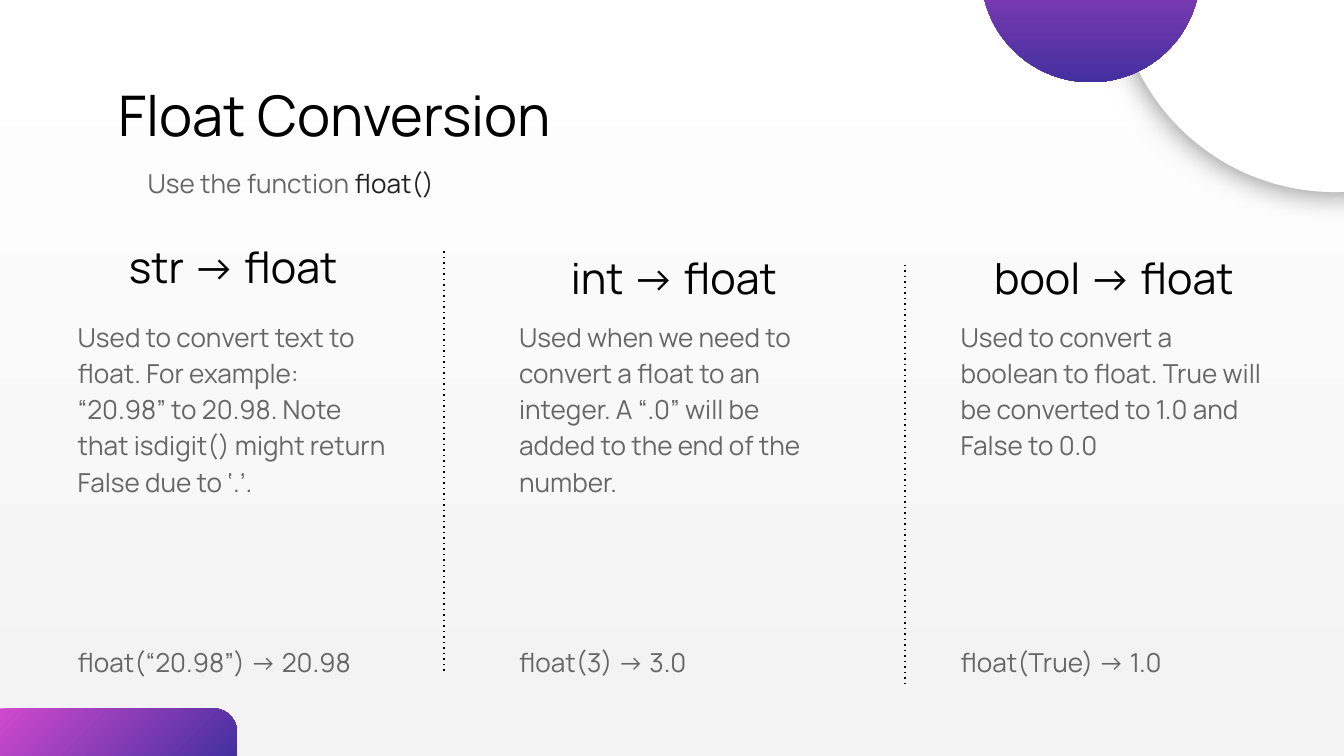
from typing import NamedTuple

from lxml.etree import SubElement
from pptx import Presentation
from pptx.dml.color import RGBColor
from pptx.enum.shapes import MSO_CONNECTOR as Connector, MSO_SHAPE as Preset
from pptx.enum.text import MSO_ANCHOR as Anchor, PP_ALIGN as Align
from pptx.oxml.ns import qn
from pptx.util import Pt

FONT = "Manrope"
BLACK, GREY, DARK, WHITE = "000000", "666666", "212121", "FFFFFF"
PINK, INDIGO, PALE = "D149CE", "43309F", "F3F3F3"
BODY_SIZE = 14
BODY_SPACING = 1.15
BODY_LINE = 19.3


class Box(NamedTuple):
    left: float
    top: float
    width: float
    height: float


class Conversion(NamedTuple):
    heading: str
    heading_box: Box
    explanation: str
    example: str
    gap_lines: int


class Divider(NamedTuple):
    x: float
    top: float
    bottom: float


CONVERSIONS = [
    Conversion(
        "str -> float", Box(52.6, 128.9, 144.7, 28.1),
        "Used to convert text to float. For example: “20.98” to 20.98. "
        "Note that isdigit() might return False due to ‘.’.",
        "float(“20.98”) -> 20.98", 4),
    Conversion(
        "int -> float", Box(288.7, 134.6, 144.7, 28.1),
        "Used when we need to convert a float to an integer. "
        "A “.0” will be added to the end of the number.",
        "float(3) -> 3.0", 4),
    Conversion(
        "bool -> float", Box(517.7, 134.6, 158.4, 28.1),
        "Used to convert a boolean to float. "
        "True will be converted to 1.0 and False to 0.0",
        "float(True) -> 1.0", 5),
]
DIVIDERS = [Divider(237.8, 134.6, 360), Divider(484.8, 141.8, 368)]
COLUMN_LEFT, COLUMN_STEP = 34.5, 236.5


def rgb(hex_colour: str) -> RGBColor:
    return RGBColor.from_string(hex_colour)


def points(box: Box) -> list:
    return [Pt(length) for length in box]


def paint_gradient(fill, start: str, end: str, angle: float) -> None:
    fill.gradient()
    fill.gradient_angle = angle
    for stop, colour in zip(fill.gradient_stops, (start, end)):
        stop.color.rgb = rgb(colour)


def add_ornament(slide, preset, box: Box):
    ornament = slide.shapes.add_shape(preset, *points(box))
    ornament.shadow.inherit = False
    ornament.line.fill.background()
    return ornament


def add_glow(ornament, colour: str, blur: float, alpha: int) -> None:
    effects = ornament._element.spPr.find(qn("a:effectLst"))
    glow = SubElement(effects, qn("a:outerShdw"), blurRad=str(Pt(blur)),
                      dist="0", dir="0", algn="ctr", rotWithShape="0")
    tint = SubElement(glow, qn("a:srgbClr"), val=colour)
    SubElement(tint, qn("a:alpha"), val=str(alpha * 1000))


def add_divider(slide, divider: Divider) -> None:
    rule = slide.shapes.add_connector(
        Connector.STRAIGHT, Pt(divider.x), Pt(divider.top),
        Pt(divider.x), Pt(divider.bottom))
    rule.line.color.rgb = rgb(BLACK)
    rule.line.width = Pt(0.75)
    SubElement(rule.get_or_add_ln(), qn("a:prstDash"), val="dot")
    SubElement(rule._element.spPr, qn("a:effectLst"))


def add_text(slide, box: Box, paragraphs: list, *, size: float = BODY_SIZE,
             align=Align.LEFT, anchor=Anchor.TOP, spacing: float = 1.0,
             gap: float = 0) -> None:
    frame = slide.shapes.add_textbox(*points(box)).text_frame
    frame.word_wrap = True
    frame.vertical_anchor = anchor
    frame.margin_left = frame.margin_right = Pt(7.2)
    frame.margin_top = frame.margin_bottom = Pt(7.2)
    for index, runs in enumerate(paragraphs):
        paragraph = frame.add_paragraph() if index else frame.paragraphs[0]
        paragraph.alignment = align
        paragraph.line_spacing = spacing
        paragraph.space_before = Pt(gap if index else 0)
        for words, colour in runs:
            run = paragraph.add_run()
            run.text = words
            run.font.name = FONT
            run.font.size = Pt(size)
            run.font.color.rgb = rgb(colour)


def add_conversion(slide, conversion: Conversion, left: float) -> None:
    add_text(slide, conversion.heading_box, [[(conversion.heading, BLACK)]],
             size=23, align=Align.CENTER, anchor=Anchor.MIDDLE)
    add_text(slide, Box(left, 162.7, 180.7, 197.3),
             [[(conversion.explanation, GREY)], [(conversion.example, GREY)]],
             spacing=BODY_SPACING, gap=conversion.gap_lines * BODY_LINE)


def main() -> None:
    deck = Presentation()
    deck.slide_width, deck.slide_height = Pt(720), Pt(405)
    slide = deck.slides.add_slide(deck.slide_layouts[6])
    paint_gradient(slide.background.fill, WHITE, PALE, 270)

    corner_tab = add_ornament(slide, Preset.ROUND_1_RECTANGLE,
                              Box(0, 379.5, 127, 25.5))
    corner_tab.adjustments[0] = 0.5
    paint_gradient(corner_tab.fill, PINK, INDIGO, 315)

    white_disc = add_ornament(slide, Preset.OVAL, Box(597.6, -131.8, 234.7, 234.7))
    white_disc.fill.solid()
    white_disc.fill.fore_color.rgb = rgb(WHITE)
    add_glow(white_disc, BLACK, blur=16.9, alpha=50)

    purple_disc = add_ornament(slide, Preset.OVAL, Box(525.6, -73.4, 117.4, 117.4))
    paint_gradient(purple_disc.fill, PINK, INDIGO, 270)

    add_text(slide, Box(56.2, 42.5, 607.7, 37.4), [[("Float Conversion", BLACK)]],
             size=30, anchor=Anchor.MIDDLE)
    add_text(slide, Box(72, 79.9, 331.9, 28.1),
             [[("Use the function ", GREY), ("float()", DARK)]],
             spacing=BODY_SPACING)
    for divider in DIVIDERS:
        add_divider(slide, divider)
    for index, conversion in enumerate(CONVERSIONS):
        add_conversion(slide, conversion, COLUMN_LEFT + index * COLUMN_STEP)

    deck.save("out.pptx")


if __name__ == "__main__":
    main()
